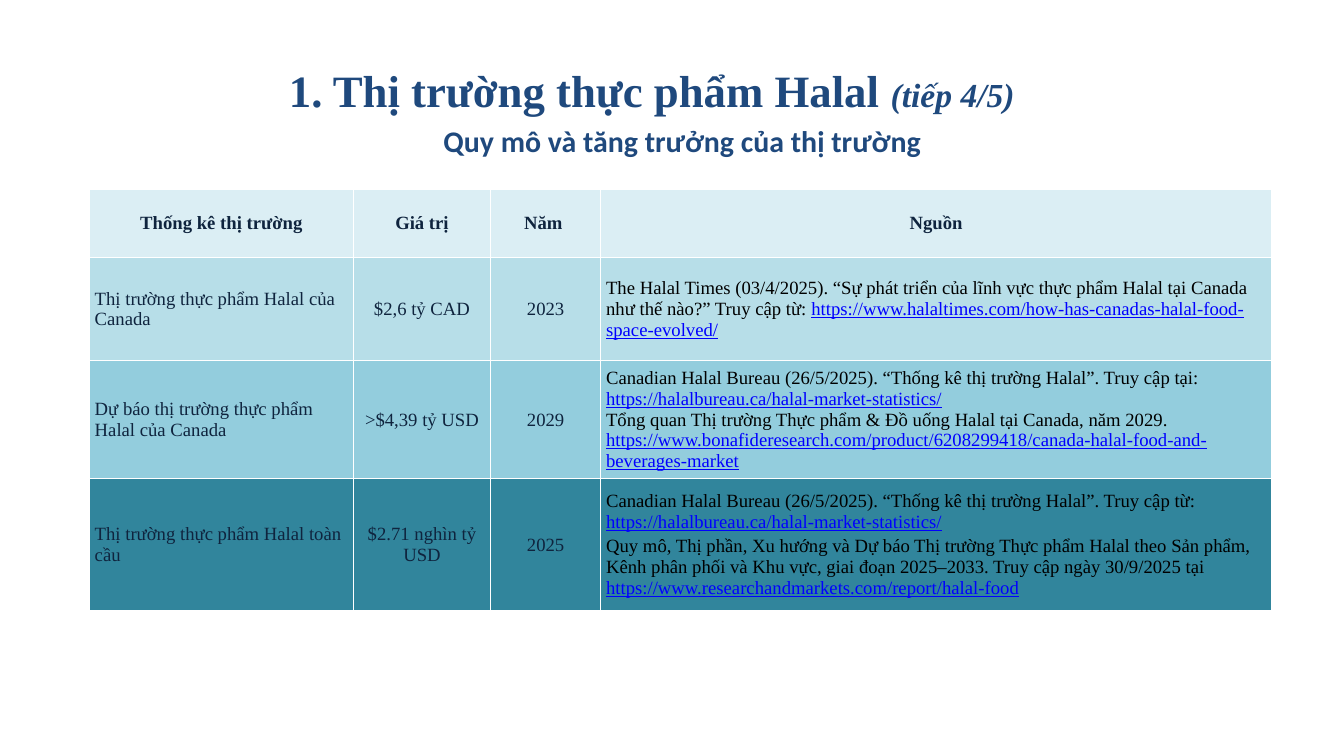
from lxml.etree import SubElement
from pptx import Presentation
from pptx.dml.color import RGBColor
from pptx.enum.text import MSO_ANCHOR, MSO_AUTO_SIZE, PP_ALIGN
from pptx.oxml.ns import qn
from pptx.util import Inches, Pt

BLUE, NAVY, BLACK, LINK, WHITE = "1F497D", "0F243E", "000000", "0000FF", "FFFFFF"
SERIF, SANS = "Times New Roman", "Calibri"

COLUMN_SHARES = [19.65, 10.2, 8.2, 49.9]
ROW_SHARES = [8.98, 13.69, 15.56, 17.51]
ROW_FILLS = ["DBEEF4", "B7DEE8", "93CDDD", "31859C"]
HEADERS = ["Thống kê thị trường", "Giá trị", "Năm ", "Nguồn"]
BUREAU_LINK = "https://halalbureau.ca/halal-market-statistics/"
BUREAU = "Canadian Halal Bureau (26/5/2025). “Thống kê thị trường Halal”. Truy cập "

# Market, value, year, sources as (citation, link), points between sources
STATISTICS = [
    ("Thị trường thực phẩm Halal của Canada", "$2,6 tỷ CAD", "2023", [
        ("The Halal Times (03/4/2025). “Sự phát triển của lĩnh vực thực phẩm Halal "
         "tại Canada như thế nào?” Truy cập từ: ",
         "https://www.halaltimes.com/how-has-canadas-halal-food-space-evolved/"),
    ], 0),
    ("Dự báo thị trường thực phẩm Halal của Canada", ">$4,39 tỷ USD", "2029", [
        (BUREAU + "tại: ", BUREAU_LINK),
        ("Tổng quan Thị trường Thực phẩm & Đồ uống Halal tại Canada, năm 2029. ",
         "https://www.bonafideresearch.com/product/6208299418/"
         "canada-halal-food-and-beverages-market"),
    ], 0),
    ("Thị trường thực phẩm Halal toàn cầu", "$2.71 nghìn tỷ USD", "2025", [
        (BUREAU + "từ: ", BUREAU_LINK),
        ("Quy mô, Thị phần, Xu hướng và Dự báo Thị trường Thực phẩm Halal theo Sản phẩm, "
         "Kênh phân phối và Khu vực, giai đoạn 2025–2033. Truy cập ngày 30/9/2025 tại ",
         "https://www.researchandmarkets.com/report/halal-food"),
    ], 4),
]


def color(value):
    return RGBColor.from_string(value)


def style_font(font, name, size, value, bold=False):
    font.name, font.size, font.bold = name, Pt(size), bold
    font.color.rgb = color(value)


class SlideBuilder:
    def __init__(self, presentation):
        self.width = presentation.slide_width
        self.height = presentation.slide_height
        self.slide = presentation.slides.add_slide(presentation.slide_layouts[5])

    def across(self, share):
        """Turn a percentage of the slide's width into a length."""
        return int(self.width * share / 100)

    def down(self, share):
        """Turn a percentage of the slide's height into a length."""
        return int(self.height * share / 100)

    def box(self, left, top, width, height):
        return self.across(left), self.down(top), self.across(width), self.down(height)

    def title(self, text, suffix, *place):
        shape = self.slide.shapes.title
        shape.left, shape.top, shape.width, shape.height = self.box(*place)
        frame = shape.text_frame
        frame.auto_size, frame.word_wrap = MSO_AUTO_SIZE.NONE, True
        paragraph = frame.paragraphs[0]
        paragraph.alignment = PP_ALIGN.CENTER
        style_font(paragraph.font, SERIF, 48, BLUE, bold=True)
        paragraph.add_run().text = text
        run = paragraph.add_run()
        run.text = suffix
        run.font.size, run.font.italic = Pt(36), True

    def subtitle(self, text, *place):
        frame = self.slide.shapes.add_textbox(*self.box(*place)).text_frame
        frame.word_wrap = True
        paragraph = frame.paragraphs[0]
        paragraph.text = text
        paragraph.alignment, paragraph.line_spacing = PP_ALIGN.CENTER, 0.9
        style_font(paragraph.font, SANS, 32, BLUE, bold=True)

    def table(self, left, top):
        place = self.box(left, top, sum(COLUMN_SHARES), sum(ROW_SHARES))
        table = self.slide.shapes.add_table(
            len(ROW_SHARES), len(COLUMN_SHARES), *place).table
        table.first_row = table.horz_banding = False
        for column, share in zip(table.columns, COLUMN_SHARES):
            column.width = self.across(share)
        for row, share, fill in zip(table.rows, ROW_SHARES, ROW_FILLS):
            row.height = self.down(share)
            for cell in row.cells:
                self.style_cell(cell, fill)
        return table

    def style_cell(self, cell, fill):
        cell.fill.solid()
        cell.fill.fore_color.rgb = color(fill)
        cell.vertical_anchor = MSO_ANCHOR.MIDDLE
        cell.margin_left = cell.margin_right = Inches(0.08)
        cell.margin_top = cell.margin_bottom = Inches(0.06)
        properties = cell._tc.get_or_add_tcPr()
        for position, side in enumerate(["lnL", "lnR", "lnT", "lnB"]):
            line = SubElement(properties, qn(f"a:{side}"), w=str(Pt(1)))
            SubElement(SubElement(line, qn("a:solidFill")), qn("a:srgbClr"), val=WHITE)
            properties.insert(position, line)

    def cell_text(self, cell, text, centered=True, bold=False):
        paragraph = cell.text_frame.paragraphs[0]
        paragraph.text = text
        paragraph.alignment = PP_ALIGN.CENTER if centered else PP_ALIGN.LEFT
        style_font(paragraph.font, SERIF, 20, NAVY, bold)

    def cell_sources(self, cell, sources, gap):
        frame = cell.text_frame
        for index, (citation, link) in enumerate(sources):
            paragraph = frame.add_paragraph() if index else frame.paragraphs[0]
            if index:
                paragraph.space_before = Pt(gap)
            style_font(paragraph.font, SERIF, 20, BLACK)
            paragraph.add_run().text = citation
            run = paragraph.add_run()
            run.text = link
            run.font.underline = True
            run.font.color.rgb = color(LINK)


def main():
    presentation = Presentation()
    presentation.slide_width, presentation.slide_height = Inches(20), Inches(11.25)
    builder = SlideBuilder(presentation)
    builder.title("1. Thị trường thực phẩm Halal ", "(tiếp 4/5)", 12.45, 7.82, 72.1, 8.09)
    table = builder.table(6.65, 25.07)
    for column, header in enumerate(HEADERS):
        builder.cell_text(table.cell(0, column), header, bold=True)
    for row, (market, value, year, sources, gap) in enumerate(STATISTICS, start=1):
        builder.cell_text(table.cell(row, 0), market, centered=False)
        builder.cell_text(table.cell(row, 1), value)
        builder.cell_text(table.cell(row, 2), year)
        builder.cell_sources(table.cell(row, 3), sources, gap)
    builder.subtitle("Quy mô và tăng trưởng của thị trường", 29.5, 16.36, 42.55, 5.24)
    presentation.save("out.pptx")


if __name__ == "__main__":
    main()
